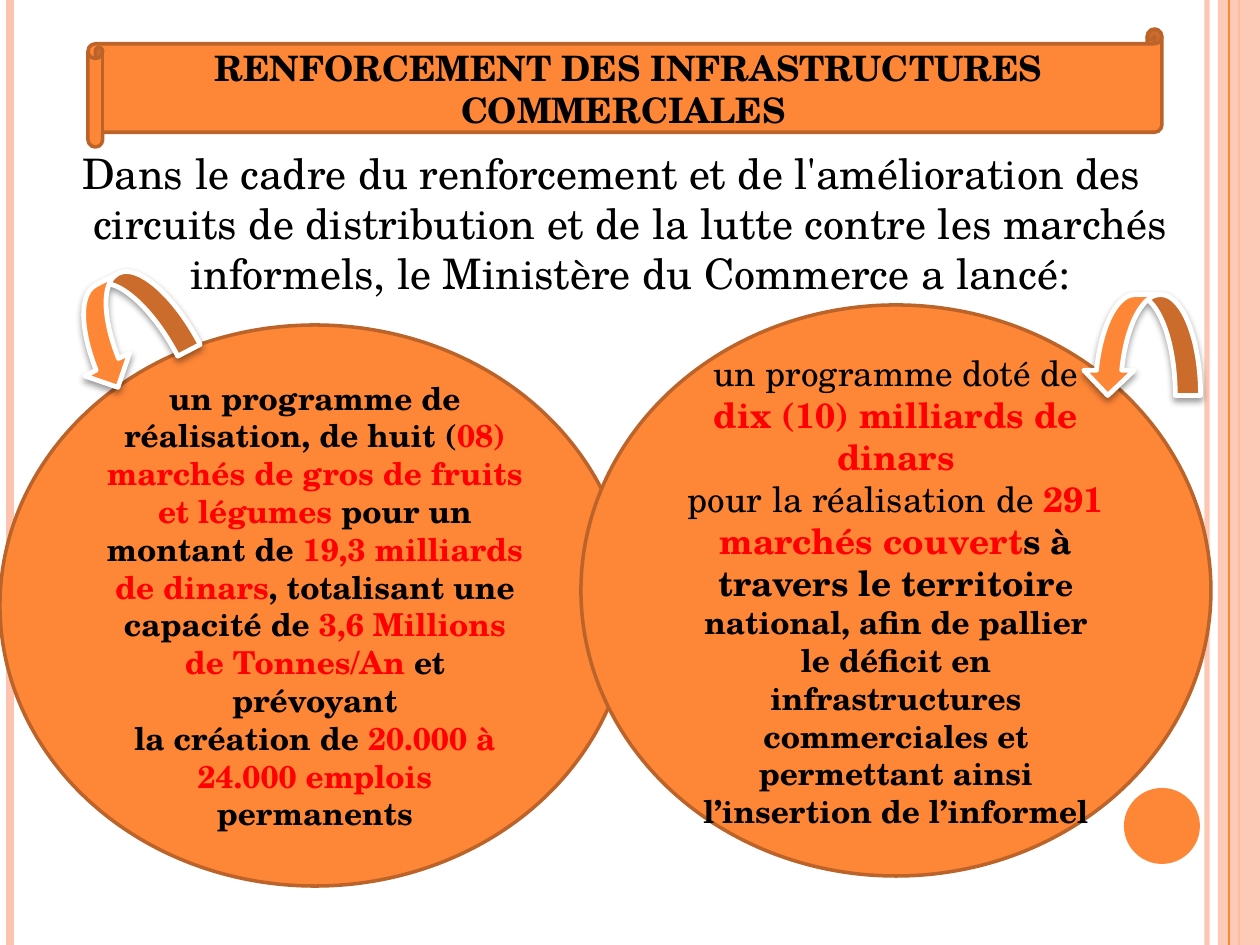
from pptx import Presentation
from pptx.dml.color import RGBColor
from pptx.enum.shapes import MSO_CONNECTOR, MSO_SHAPE
from pptx.enum.text import MSO_ANCHOR, PP_ALIGN
from pptx.oxml import parse_xml
from pptx.oxml.ns import nsdecls, qn
from pptx.util import Emu, Pt
from lxml.etree import SubElement

EMU_PER_PIXEL = 914400 / 126
FONT = "TeX Gyre Schola"
ORANGE, BROWN, PINK = "FE8637", "BC6329", "FEC3AE"
BLACK, RED, WHITE = "000000", "FF0000", "FFFFFF"


def px(length):
    return Emu(round(length * EMU_PER_PIXEL))


def color(hex_string):
    return RGBColor.from_string(hex_string)


def set_opacity(element, percent):
    for color_element in element.iter(qn("a:srgbClr")):
        SubElement(color_element, qn("a:alpha"), val=str(percent * 1000))


def add_solid(slide, kind, box, line=None, width=2):
    shape = slide.shapes.add_shape(kind, *map(px, box))
    shape.shadow.inherit = False
    shape.fill.solid()
    shape.fill.fore_color.rgb = color(ORANGE)
    if line:
        shape.line.color.rgb = color(line)
        shape.line.width = Pt(width)
    else:
        shape.line.fill.background()
    return shape


def write_paragraphs(shape, paragraphs):
    frame = shape.text_frame
    frame.word_wrap = True
    for index, runs in enumerate(paragraphs):
        paragraph = frame.add_paragraph() if index else frame.paragraphs[0]
        paragraph.alignment = PP_ALIGN.CENTER
        for text, size, hex_string, bold in runs:
            run = paragraph.add_run()
            run.text = text
            run.font.name = FONT
            run.font.size = Pt(size)
            run.font.bold = bold
            run.font.color.rgb = color(hex_string)


def add_stripe(slide, x, top, height, hex_string, width, opacity=100):
    line = slide.shapes.add_connector(
        MSO_CONNECTOR.STRAIGHT, px(x), px(top), px(x), px(top + height))
    line.line.color.rgb = color(hex_string)
    line.line.width = Pt(width)
    properties = line._element.spPr
    set_opacity(properties, opacity)
    SubElement(properties, qn("a:effectLst"))


def add_decoration(slide, box):
    left, top, width, height = box
    right = left + width
    add_stripe(slide, right - 53, top, height, PINK, 3, 93)
    add_stripe(slide, left + 10, top, height, PINK, 4.5)
    add_stripe(slide, right - 21, top, height, ORANGE, 1.5)
    band = add_solid(slide, MSO_SHAPE.RECTANGLE, (right - 42, top, 42, height))
    band.fill.fore_color.rgb = color(PINK)
    set_opacity(band._element.spPr, 87)
    add_stripe(slide, right - 31, top, height, ORANGE, 0.75)
    add_solid(slide, MSO_SHAPE.OVAL, (right - 136, top + 788, 76, 76))


def add_introduction(slide, box, text):
    text_box = slide.shapes.add_textbox(*map(px, box))
    write_paragraphs(text_box, [[(text, 24, BLACK, False)]])
    properties = text_box.text_frame.paragraphs[0]._p.get_or_add_pPr()
    properties.set("marL", str(px(38)))
    properties.set("indent", str(px(-38)))


def add_program(slide, box, paragraphs):
    circle = add_solid(slide, MSO_SHAPE.OVAL, box, BROWN)
    circle.text_frame.vertical_anchor = MSO_ANCHOR.MIDDLE
    write_paragraphs(circle, paragraphs)


def add_curved_arrow(slide, box, rotation):
    arrow = add_solid(slide, MSO_SHAPE.CURVED_RIGHT_ARROW, box, WHITE, 2.75)
    arrow.rotation = rotation
    properties = arrow._element.spPr
    properties.remove(properties.find(qn("a:effectLst")))
    properties.append(parse_xml(
        f'<a:effectLst {nsdecls("a")}>'
        f'<a:outerShdw blurRad="{Pt(4)}" dist="{Pt(2)}" dir="5400000" rotWithShape="0">'
        f'<a:srgbClr val="{BLACK}"><a:alpha val="40000"/></a:srgbClr>'
        '</a:outerShdw></a:effectLst>'))


def add_title(slide, box, text):
    scroll = add_solid(slide, MSO_SHAPE.HORIZONTAL_SCROLL, box, BROWN)
    scroll.text_frame.vertical_anchor = MSO_ANCHOR.MIDDLE
    write_paragraphs(scroll, [[(text, 20, BLACK, True)]])


WHOLESALE_MARKETS = [
    [("un programme de réalisation, de huit (", 18, BLACK, True),
     ("08) marchés de gros de fruits et légumes", 18, RED, True),
     (" pour un montant de ", 18, BLACK, True),
     ("19,3 milliards de dinars", 18, RED, True),
     (", totalisant une capacité de ", 18, BLACK, True),
     ("3,6 Millions de Tonnes/An", 18, RED, True),
     (" et prévoyant", 18, BLACK, True)],
    [("la création de ", 18, BLACK, True),
     ("20.000 à 24.000 emplois", 18, RED, True),
     (" permanents", 18, BLACK, True)],
]
COVERED_MARKETS = [
    [("un programme doté de ", 20, BLACK, False),
     ("dix (10) milliards de dinars", 20, RED, True)],
    [("pour la réalisation de ", 20, BLACK, False),
     ("291 marchés couvert", 20, RED, True),
     ("s à travers le territoir", 20, BLACK, True),
     ("e national, afin de pallier le déficit en infrastructures commerciales "
      "et permettant ainsi l’insertion de l’informel", 18, BLACK, True)],
]


def main():
    presentation = Presentation()
    presentation.slide_width = px(1260)
    presentation.slide_height = px(945)
    slide = presentation.slides.add_slide(presentation.slide_layouts[6])
    add_decoration(slide, (0, 0, 1260, 945))
    add_introduction(
        slide, (20, 141, 1182, 165),
        "Dans le cadre du renforcement et de l'amélioration des circuits de "
        "distribution et de la lutte contre les marchés informels, "
        "le Ministère du Commerce a lancé:")
    add_program(slide, (0, 325, 630, 561), WHOLESALE_MARKETS)
    add_program(slide, (581, 305, 630, 571), COVERED_MARKETS)
    add_curved_arrow(slide, (1091, 286, 101, 118), 90)
    add_curved_arrow(slide, (74, 268, 101, 118), 62.5)
    add_title(slide, (88, 29, 1074, 118),
              "RENFORCEMENT DES INFRASTRUCTURES COMMERCIALES ")
    presentation.save("out.pptx")


if __name__ == "__main__":
    main()
